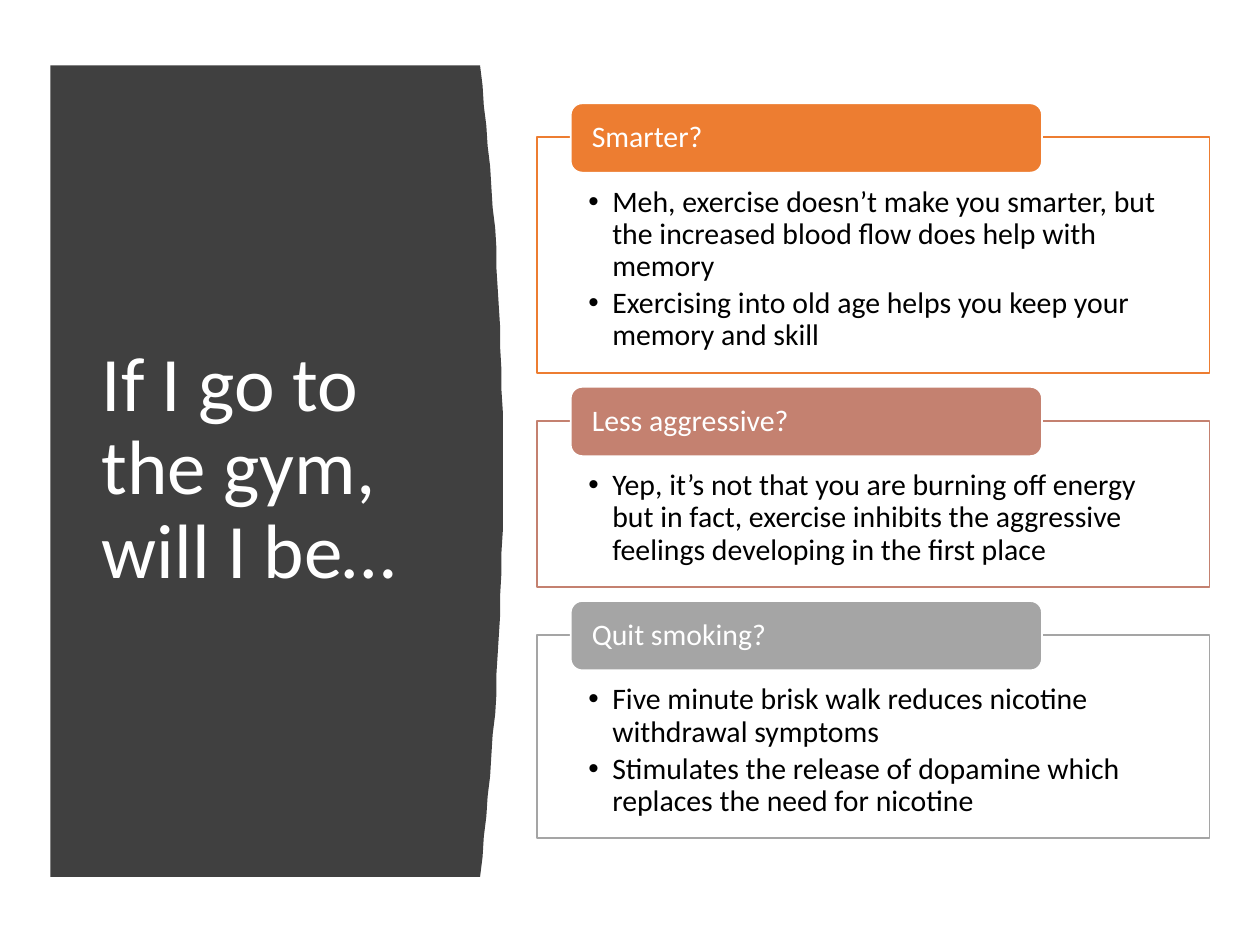
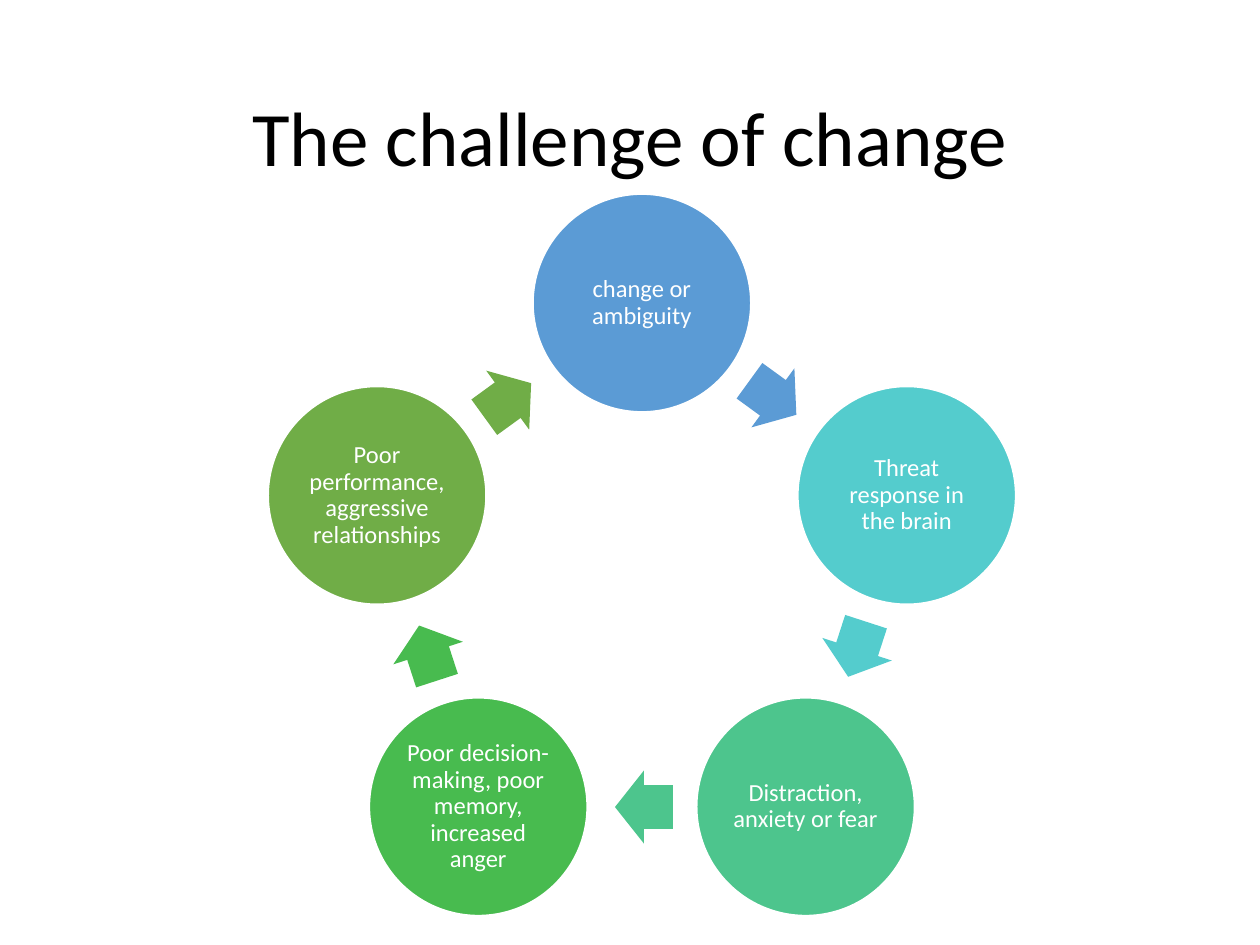
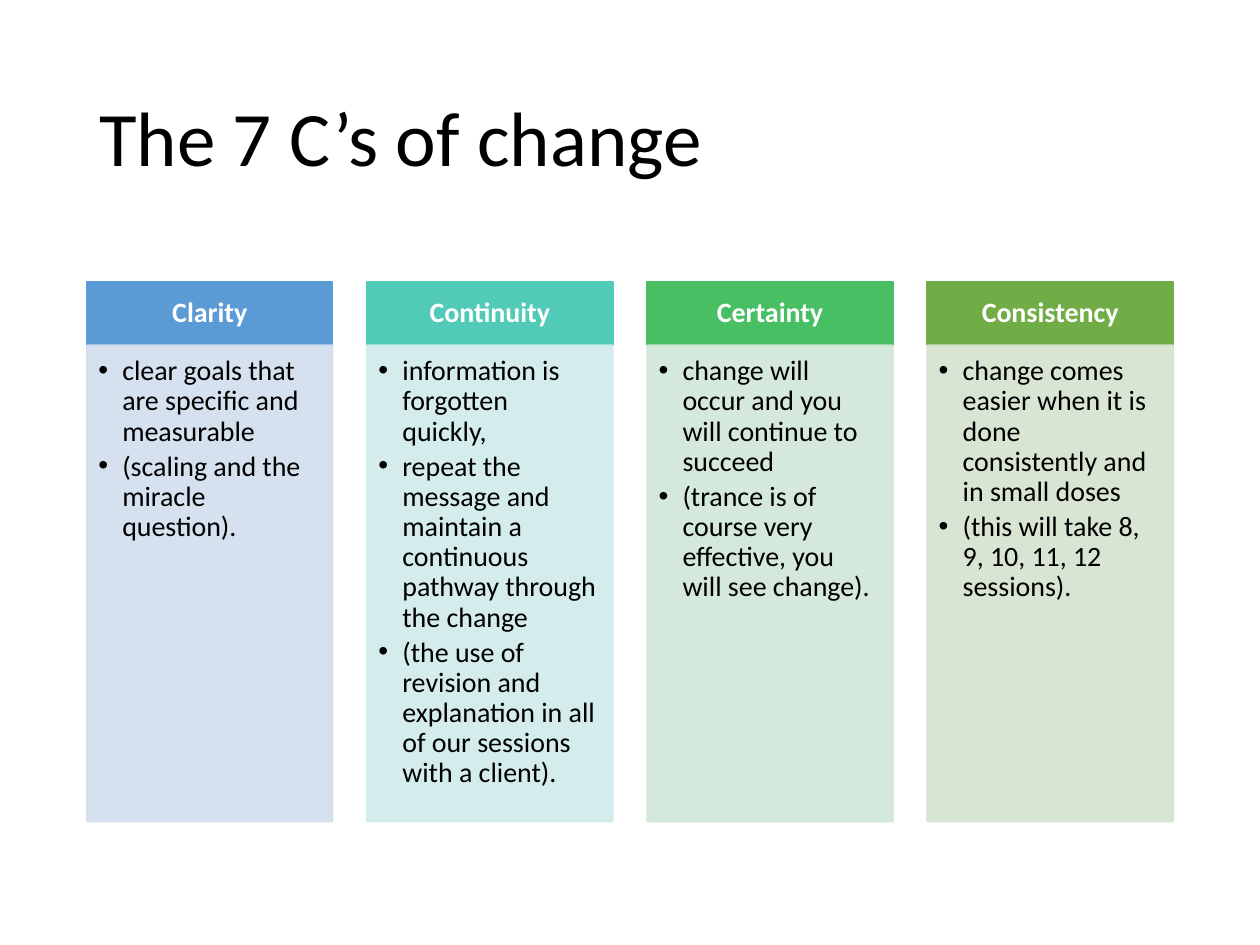
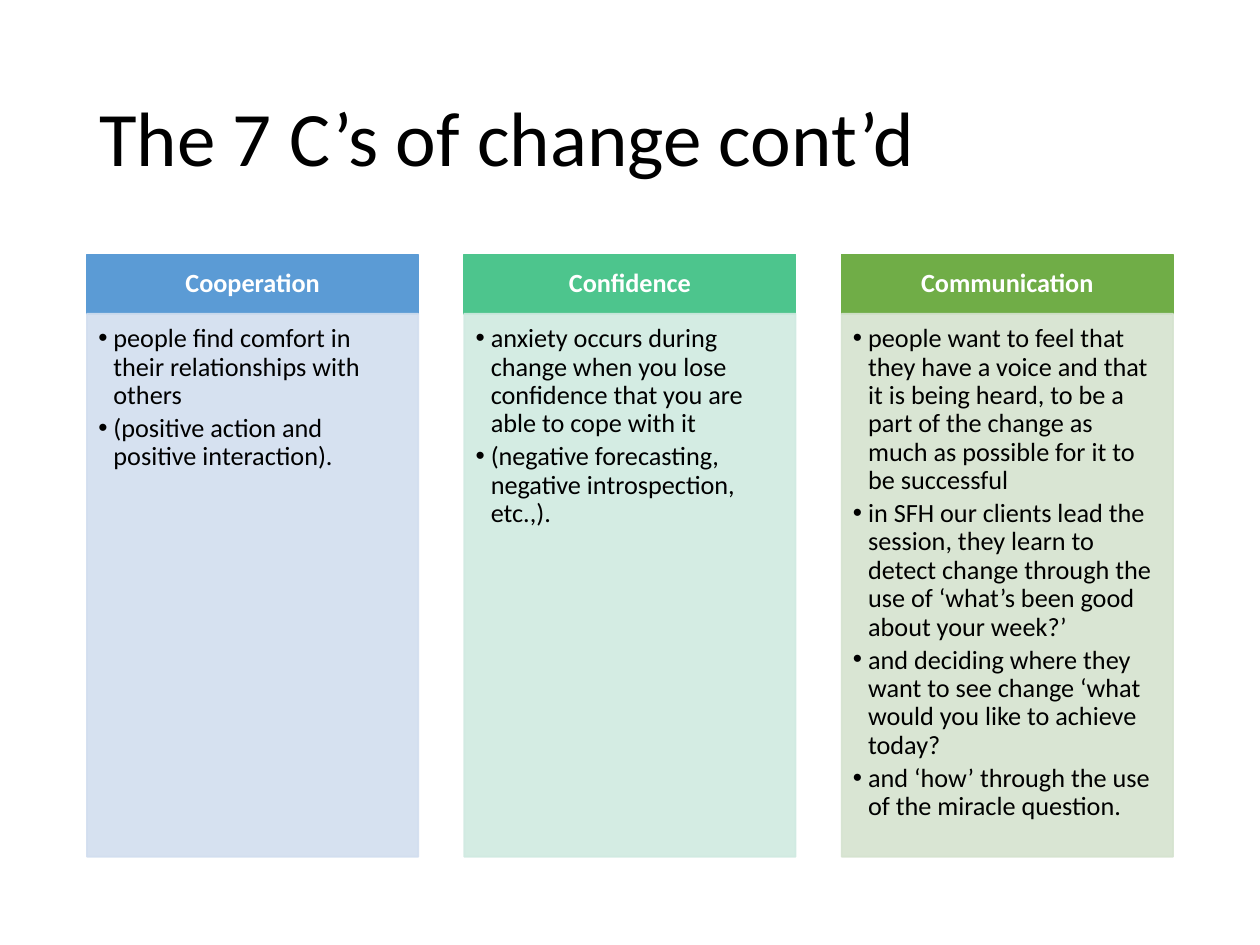
from math import cos, radians, sin

from lxml.etree import SubElement
from pptx import Presentation
from pptx.dml.color import RGBColor
from pptx.enum.shapes import MSO_SHAPE
from pptx.enum.text import MSO_ANCHOR, PP_ALIGN
from pptx.oxml.ns import qn
from pptx.util import Emu, Pt

BLACK = RGBColor(0x00, 0x00, 0x00)
WHITE = RGBColor(0xFF, 0xFF, 0xFF)
CHARCOAL = RGBColor(0x40, 0x40, 0x40)
ORANGE = RGBColor(0xED, 0x7D, 0x31)
CLAY = RGBColor(0xC4, 0x81, 0x70)
GREY = RGBColor(0xA5, 0xA5, 0xA5)
BLUE = RGBColor(0x5B, 0x9B, 0xD5)
AQUA = RGBColor(0x54, 0xCC, 0xCD)
TURQUOISE = RGBColor(0x52, 0xCA, 0xB8)
MINT = RGBColor(0x4D, 0xC5, 0x8D)
EMERALD = RGBColor(0x49, 0xBF, 0x64)
GREEN = RGBColor(0x48, 0xBB, 0x4F)
OLIVE = RGBColor(0x70, 0xAD, 0x47)
PALE_BLUE = RGBColor(0xD2, 0xDE, 0xEF)
PALE_TURQUOISE = RGBColor(0xD0, 0xEC, 0xEA)
PALE_EMERALD = RGBColor(0xD0, 0xE7, 0xD8)
PALE_MINT = RGBColor(0xD0, 0xEA, 0xE1)
PALE_OLIVE = RGBColor(0xD5, 0xE3, 0xCF)

EMU_PER_PX = 9144
FONT = "Calibri"
TITLE_SIZE = 44
TITLE_BOX = (69, 40, 862, 145)
LEFT_EDGE, CONTENT_WIDTH = 69, 862


def px(length):
    """Turn px into EMU."""
    return Emu(round(length * EMU_PER_PX))


def soften(element):
    """Make every colour inside the element 90% opaque."""
    for colour in element.iter(qn("a:srgbClr")):
        SubElement(colour, qn("a:alpha"), val="90000")


class SlideBuilder:
    """Hold the deck style and the current page."""

    def __init__(self):
        """Start an empty 10 by 7.5 inch deck."""
        self.deck = Presentation()
        self.deck.slide_width, self.deck.slide_height = px(1000), px(750)
        self.page = None

    def new_page(self):
        """Add a blank page and make it current."""
        self.page = self.deck.slides.add_slide(self.deck.slide_layouts[6])

    def paint(self, shape, fill, line=None):
        """Give a shape a flat fill and an optional 1 pt line."""
        shape.shadow.inherit = False
        shape.fill.solid()
        shape.fill.fore_color.rgb = fill
        if line is None:
            shape.line.fill.background()
        else:
            shape.line.color.rgb = line
            shape.line.width = Pt(1)

    def shape(self, kind, box, fill, line=None):
        """Add a painted preset shape."""
        shape = self.page.shapes.add_shape(kind, *map(px, box))
        self.paint(shape, fill, line)
        return shape

    def frame(self, shape, insets, anchor):
        """Set wrapping, insets and anchor, and return the text frame."""
        frame = shape.text_frame
        frame.word_wrap = True
        frame.vertical_anchor = anchor
        (frame.margin_left, frame.margin_top,
         frame.margin_right, frame.margin_bottom) = map(px, insets)
        return frame

    def add_text(self, para, text, size, color, align=PP_ALIGN.LEFT, bold=False):
        """Put one styled run into a paragraph."""
        para.alignment = align
        para.line_spacing = 0.9
        span = para.add_run()
        span.text = text
        span.font.name = FONT
        span.font.size = Pt(size)
        span.font.bold = bold
        span.font.color.rgb = color

    def label(self, shape, text, size, insets, align=PP_ALIGN.CENTER, bold=False):
        """Put a white label in the middle of a shape."""
        frame = self.frame(shape, insets, MSO_ANCHOR.MIDDLE)
        self.add_text(frame.paragraphs[0], text, size, WHITE, align, bold)

    def bullets(self, shape, items, size, insets, indent):
        """Put a black bulleted list at the top of a shape."""
        frame = self.frame(shape, insets, MSO_ANCHOR.TOP)
        for index, item in enumerate(items):
            para = frame.add_paragraph() if index else frame.paragraphs[0]
            self.add_text(para, item, size, BLACK)
            para.level = 1
            para.space_after = Pt(round(size * 0.17, 1))
            properties = para._p.get_or_add_pPr()
            properties.set("marL", str(px(indent)))
            properties.set("indent", str(-px(indent)))
            SubElement(properties, qn("a:buFont"), typeface="Arial")
            SubElement(properties, qn("a:buChar"), char="•")

    def title(self, text, box=TITLE_BOX, color=BLACK, align=PP_ALIGN.LEFT):
        """Add the page title."""
        shape = self.page.shapes.add_textbox(*map(px, box))
        frame = self.frame(shape, (10, 5, 10, 5), MSO_ANCHOR.MIDDLE)
        self.add_text(frame.paragraphs[0], text, TITLE_SIZE, color, align)

    def curved_panel(self, left, top, width, height, bulge, fill):
        """Add a panel whose right side bulges outwards."""
        steps = 40
        edge = []
        for step in range(steps + 1):
            offset = 2 * step / steps - 1
            edge.append((left + width - bulge * offset ** 2,
                         top + height * step / steps))
        builder = self.page.shapes.build_freeform(left, top, scale=EMU_PER_PX)
        builder.add_line_segments(edge + [(left, top + height)], close=True)
        self.paint(builder.convert_to_shape(), fill)

    def answer(self, top, height, color, question, items):
        """Add an outlined answer box with a question tag on its top edge."""
        box = self.shape(MSO_SHAPE.RECTANGLE, (426, top, 534, height), WHITE, color)
        soften(box.element.spPr.find(qn("a:solidFill")))
        self.bullets(box, items, 17, (41, 39, 41, 13), 19)
        tag = self.shape(MSO_SHAPE.ROUNDED_RECTANGLE, (453, top - 27, 374, 55), color, WHITE)
        self.label(tag, question, 17, (14, 0, 14, 0), PP_ALIGN.LEFT)

    def cycle(self, center_x, center_y, stages):
        """Add a ring of circles with an arrow after each one."""
        diameter, arrow_width, arrow_height = 173, 46, 58
        turn = 360 / len(stages)

        def around(radius, degrees, width, height):
            """Return a box centred on the ring at a clockwise angle from the top."""
            x = center_x + radius * sin(radians(degrees))
            y = center_y - radius * cos(radians(degrees))
            return x - width / 2, y - height / 2, width, height

        for index, (text, color) in enumerate(stages):
            angle = index * turn
            circle = self.shape(MSO_SHAPE.OVAL, around(221, angle, diameter, diameter),
                                color, WHITE)
            self.label(circle, text, 14, (2, 2, 2, 2))
            arrow = self.shape(MSO_SHAPE.RIGHT_ARROW,
                               around(179, angle + 35.5, arrow_width, arrow_height), color)
            arrow.rotation = angle + turn / 2
            arrow.adjustments[0], arrow.adjustments[1] = 0.6, 0.5

    def columns(self, top, width, head_height, body_height, size, indent, topics):
        """Add equally spaced columns, each a heading over a list."""
        pitch = (CONTENT_WIDTH - width) / (len(topics) - 1)
        for index, (heading, color, pale, items) in enumerate(topics):
            left = LEFT_EDGE + index * pitch
            head = self.shape(MSO_SHAPE.RECTANGLE, (left, top, width, head_height),
                              color, color)
            self.label(head, heading, size, (12, 7, 12, 7), bold=True)
            body = self.shape(MSO_SHAPE.RECTANGLE,
                              (left, top + head_height, width, body_height), pale, pale)
            soften(body.element.spPr)
            self.bullets(body, items, size, (9, 9, 12, 14), indent)


def build_gym(slides):
    """Build the page of questions about exercise."""
    answers = [
        (187, ORANGE, "Smarter?", [
            "Meh, exercise doesn’t make you smarter, but the increased blood flow "
            "does help with memory",
            "Exercising into old age helps you keep your memory and skill"]),
        (132, CLAY, "Less aggressive?", [
            "Yep, it’s not that you are burning off energy but in fact, exercise "
            "inhibits the aggressive feelings developing in the first place"]),
        (161, GREY, "Quit smoking?", [
            "Five minute brisk walk reduces nicotine withdrawal symptoms",
            "Stimulates the release of dopamine which replaces the need for nicotine"]),
    ]
    slides.new_page()
    slides.curved_panel(40, 52, 359, 644, 18, CHARCOAL)
    slides.title("If I go to the gym, will I be…", (71, 111, 280, 524), WHITE)
    top, gap = 109, 38
    for height, color, question, items in answers:
        slides.answer(top, height, color, question, items)
        top += height + gap


def build_challenge(slides):
    """Build the page with the cycle of change."""
    slides.new_page()
    slides.title("The challenge of change", align=PP_ALIGN.CENTER)
    slides.cycle(509.5, 461.5, [
        ("change or ambiguity", BLUE),
        ("Threat response in the brain", AQUA),
        ("Distraction, anxiety or fear", MINT),
        ("Poor decision-making, poor memory, increased anger", GREEN),
        ("Poor performance, aggressive relationships", OLIVE),
    ])


def build_first_topics(slides):
    """Build the page with the first four C’s."""
    slides.new_page()
    slides.title("The 7 C’s of change")
    slides.columns(224, 195, 50, 378, 16, 19, [
        ("Clarity", BLUE, PALE_BLUE, [
            "clear goals that are specific and measurable",
            "(scaling and the miracle question)."]),
        ("Continuity", TURQUOISE, PALE_TURQUOISE, [
            "information is forgotten quickly,",
            "repeat the message and maintain a continuous pathway through the change",
            "(the use of revision and explanation in all of our sessions with a client)."]),
        ("Certainty", EMERALD, PALE_EMERALD, [
            "change will occur and you will continue to succeed",
            "(trance is of course very effective, you will see change)."]),
        ("Consistency", OLIVE, PALE_OLIVE, [
            "change comes easier when it is done consistently and in small doses",
            "(this will take 8, 9, 10, 11, 12 sessions)."]),
    ])


def build_last_topics(slides):
    """Build the page with the last three C’s."""
    slides.new_page()
    slides.title("The 7 C’s of change cont’d")
    slides.columns(202, 263, 47, 431, 15, 12, [
        ("Cooperation", BLUE, PALE_BLUE, [
            "people find comfort in their relationships with others",
            "(positive action and positive interaction)."]),
        ("Confidence", MINT, PALE_MINT, [
            "anxiety occurs during change when you lose confidence that you are able "
            "to cope with it",
            "(negative forecasting, negative introspection, etc.,)."]),
        ("Communication", OLIVE, PALE_OLIVE, [
            "people want to feel that they have a voice and that it is being heard, "
            "to be a part of the change as much as possible for it to be successful",
            "in SFH our clients lead the session, they learn to detect change through "
            "the use of ‘what’s been good about your week?’",
            "and deciding where they want to see change ‘what would you like to "
            "achieve today?",
            "and ‘how’ through the use of the miracle question."]),
    ])


def main():
    """Build and save the deck."""
    slides = SlideBuilder()
    build_gym(slides)
    build_challenge(slides)
    build_first_topics(slides)
    build_last_topics(slides)
    slides.deck.save("out.pptx")


if __name__ == "__main__":
    main()
